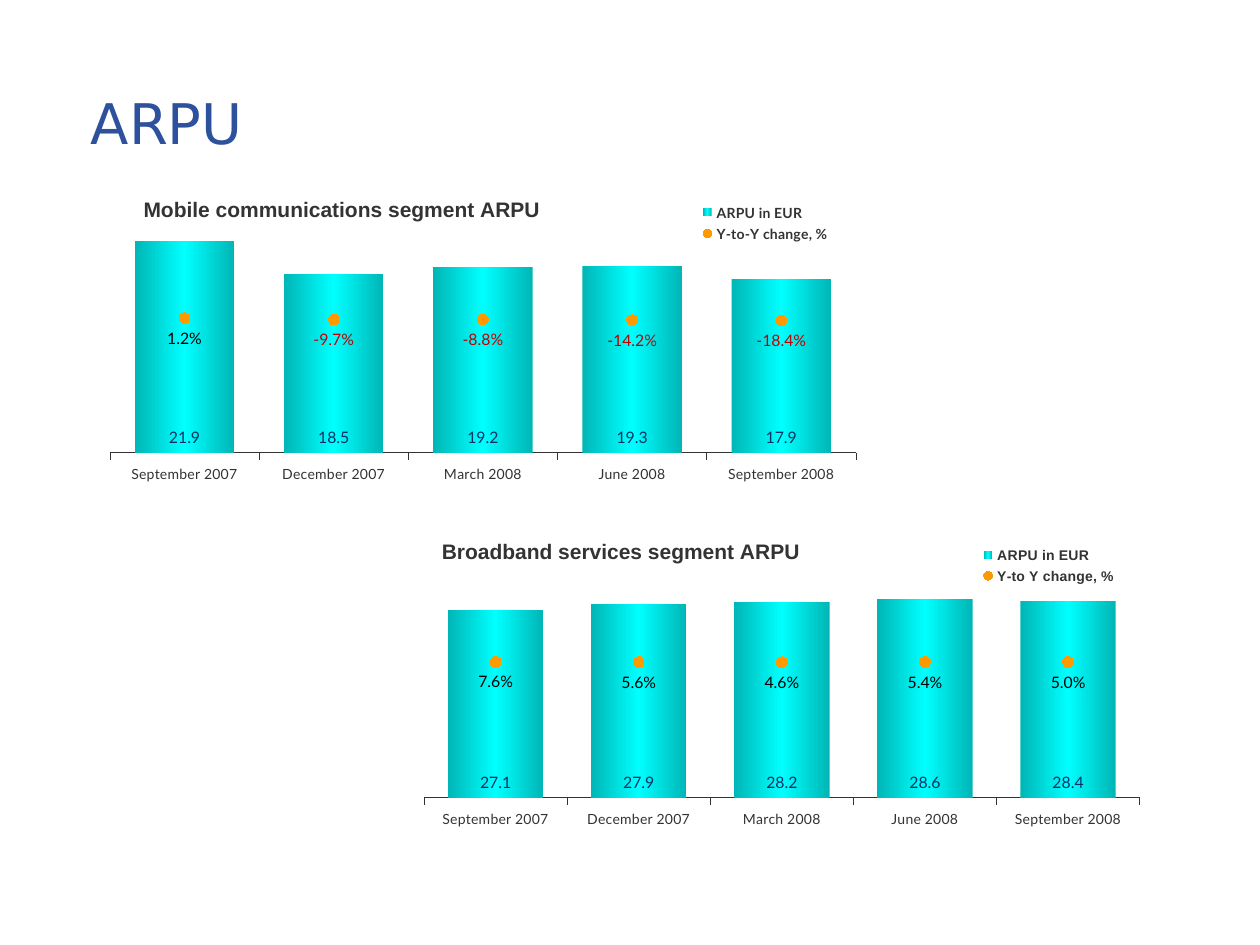
from copy import deepcopy
from dataclasses import dataclass

from pptx import Presentation
from pptx.chart.axis import ValueAxis
from pptx.chart.data import CategoryChartData
from pptx.dml.color import RGBColor
from pptx.enum.chart import XL_CHART_TYPE as ChartType
from pptx.enum.chart import XL_LABEL_POSITION as LabelPosition
from pptx.enum.chart import XL_LEGEND_POSITION as LegendPosition
from pptx.enum.chart import XL_MARKER_STYLE as MarkerStyle
from pptx.enum.chart import XL_TICK_LABEL_POSITION as TickLabels
from pptx.enum.chart import XL_TICK_MARK as TickMark
from pptx.enum.text import MSO_ANCHOR as Anchor
from pptx.enum.text import PP_ALIGN as Align
from pptx.oxml import parse_xml
from pptx.oxml.ns import nsdecls, qn
from pptx.util import Inches, Pt


@dataclass(frozen=True)
class Theme:
    heading: str = "2E519E"
    text: str = "333333"
    black: str = "000000"
    bar: str = "00FFFF"
    bar_label: str = "003366"
    marker: str = "FF9900"
    negative: str = "C00000"
    heading_font: str = "DejaVu Sans"
    title_font: str = "Arial"
    body_font: str = "Lato"
    heading_size: float = 32
    title_size: float = 12
    label_size: float = 9
    chart_size: float = 8.5
    small_size: float = 8


@dataclass(frozen=True)
class ArpuChart:
    title: str
    box: tuple[float, float, float, float]
    arpu: tuple[float, ...]
    change_name: str
    changes: tuple[float, ...]
    arpu_max: float
    title_place: tuple[float, float]
    legend_place: tuple[float, float, float, float]
    legend_font: str


THEME = Theme()
QUARTERS = ("September 2007", "December 2007", "March 2008", "June 2008", "September 2008")
PLOT_PLACE = (0.027, 0.129, 0.925, 0.722)
CHARTS = (
    ArpuChart("Broadband services segment ARPU", (3.2, 4.06, 6.14, 2.67),
              (27.1, 27.9, 28.2, 28.6, 28.4), "Y-to Y change, %",
              (0.076, 0.056, 0.046, 0.054, 0.05), 35,
              (0.045, 0.07), (0.735, 0.09, 0.2, 0.14), "Arial"),
    ArpuChart("Mobile communications segment ARPU", (0.7, 1.33, 6.4, 2.66),
              (21.9, 18.5, 19.2, 19.3, 17.9), "Y-to-Y change, %",
              (0.012, -0.097, -0.088, -0.142, -0.184), 25,
              (0.064, 0.075), (0.75, 0.095, 0.18, 0.14), "Lato"),
)


def style_font(font, size: float, color: str, name: str, bold: bool = False) -> None:
    font.size, font.name, font.bold = Pt(size), name, bold
    font.color.rgb = RGBColor.from_string(color)


def place_part(part, index: int, place: tuple[float, ...], inner: bool = False) -> None:
    """Give a chart part a manual layout in fractions of the chart, as child number index."""
    for old in part.findall(qn("c:layout")):
        part.remove(old)
    target = '<c:layoutTarget val="inner"/>' if inner else ""
    modes = '<c:xMode val="edge"/><c:yMode val="edge"/>'
    sizes = "".join(f'<c:{key} val="{value}"/>' for key, value in zip("xywh", place))
    part.insert(index, parse_xml(
        f'<c:layout {nsdecls("c")}><c:manualLayout>{target}{modes}{sizes}'
        "</c:manualLayout></c:layout>"))


def fill_cylinder(series) -> None:
    """Fill the bars from dark edges to a bright middle."""
    edge = f'<a:srgbClr val="{THEME.bar}"><a:shade val="46275"/></a:srgbClr>'
    series.format.line.fill.background()
    series._element.get_or_add_spPr().insert(0, parse_xml(
        f'<a:gradFill {nsdecls("a")}><a:gsLst><a:gs pos="0">{edge}</a:gs>'
        f'<a:gs pos="50000"><a:srgbClr val="{THEME.bar}"/></a:gs>'
        f'<a:gs pos="100000">{edge}</a:gs></a:gsLst><a:lin ang="0" scaled="1"/></a:gradFill>'))


def style_axes(chart, maximum: float) -> None:
    months = chart.category_axis
    months.major_tick_mark = TickMark.OUTSIDE
    months.minor_tick_mark = TickMark.NONE
    months.tick_label_position = TickLabels.LOW
    months.format.line.color.rgb = RGBColor.from_string(THEME.text)
    months.format.line.width = Pt(0.25)
    style_font(months.tick_labels.font, THEME.small_size, THEME.text, THEME.body_font)
    values = chart.value_axis
    values.has_major_gridlines = False
    values.major_tick_mark = values.minor_tick_mark = TickMark.NONE
    values.tick_label_position = TickLabels.NONE
    values.format.line.fill.background()
    values.minimum_scale, values.maximum_scale = 0, maximum


def move_change_to_second_axis(chart) -> None:
    """Turn the second bar series into a line on its own hidden axes."""
    bars = chart.plots[0]._element
    change = bars.findall(qn("c:ser"))[1]
    for flag in change.findall(qn("c:invertIfNegative")):
        change.remove(flag)
    line = parse_xml(
        f'<c:lineChart {nsdecls("c")}><c:grouping val="standard"/><c:varyColors val="0"/>'
        '<c:marker val="1"/><c:axId val="501"/><c:axId val="502"/></c:lineChart>')
    line.insert(2, change)
    bars.addnext(line)

    months, values = (deepcopy(axis._element) for axis in (chart.category_axis, chart.value_axis))
    for axis, own, other in ((months, "501", "502"), (values, "502", "501")):
        axis.find(qn("c:axId")).set("val", own)
        axis.find(qn("c:crossAx")).set("val", other)
    chart.value_axis._element.addnext(values)
    values.addnext(months)
    months.find(qn("c:delete")).set("val", "1")
    values.find(qn("c:axPos")).set("val", "r")
    values.find(qn("c:crosses")).set("val", "max")
    scale = ValueAxis(values)
    scale.minimum_scale, scale.maximum_scale = -10, 8


def label_series(series, position, number_format: str, color: str) -> None:
    labels = series.data_labels
    labels.show_value = True
    labels.number_format, labels.number_format_is_linked = number_format, False
    labels.position = position
    style_font(labels.font, THEME.label_size, color, THEME.body_font)


def style_change(series, changes: tuple[float, ...]) -> None:
    series.smooth = False
    series.format.line.fill.background()
    series.marker.style, series.marker.size = MarkerStyle.CIRCLE, 6
    series.marker.format.fill.solid()
    series.marker.format.fill.fore_color.rgb = RGBColor.from_string(THEME.marker)
    series.marker.format.line.fill.background()
    label_series(series, LabelPosition.BELOW, "0.0%", THEME.black)
    for index, change in enumerate(changes):
        if change < 0:
            label = series.points[index].data_label
            style_font(label.font, THEME.label_size, THEME.negative, THEME.body_font)
            label.position = LabelPosition.BELOW


def draw_chart(page, item: ArpuChart) -> None:
    data = CategoryChartData()
    data.categories = QUARTERS
    data.add_series("ARPU in EUR", item.arpu, "0.0")
    data.add_series(item.change_name, item.changes, "0.0%")
    chart = page.shapes.add_chart(
        ChartType.COLUMN_CLUSTERED, *map(Inches, item.box), data).chart
    style_font(chart.font, THEME.chart_size, THEME.black, THEME.body_font)

    chart.has_title = True
    chart.chart_title.text_frame.text = item.title
    heading = chart.chart_title.text_frame.paragraphs[0].runs[0]
    style_font(heading.font, THEME.title_size, THEME.text, THEME.title_font, True)
    chart.chart_title.include_in_layout = False
    place_part(chart.chart_title._element, 1, item.title_place)

    chart.has_legend = True
    chart.legend.position = LegendPosition.CORNER
    chart.legend.include_in_layout = False
    style_font(chart.legend.font, THEME.small_size, THEME.text, item.legend_font, True)
    place_part(chart.legend._element, 1, item.legend_place)

    style_axes(chart, item.arpu_max)
    move_change_to_second_axis(chart)
    place_part(chart._chartSpace.chart.plotArea, 0, PLOT_PLACE, inner=True)
    bars, line = chart.plots
    bars.gap_width, bars.vary_by_categories = 50, False
    fill_cylinder(bars.series[0])
    label_series(bars.series[0], LabelPosition.INSIDE_BASE, "0.0", THEME.bar_label)
    style_change(line.series[0], item.changes)


def main() -> None:
    deck = Presentation()
    deck.slide_width, deck.slide_height = Inches(10), Inches(7.5)
    page = deck.slides.add_slide(deck.slide_layouts[5])
    title = page.shapes.title
    title.left, title.top, title.width, title.height = map(Inches, (0.62, 0.52, 6.67, 0.89))
    title.text_frame.text = "ARPU"
    title.text_frame.vertical_anchor = Anchor.MIDDLE
    para = title.text_frame.paragraphs[0]
    para.alignment = Align.LEFT
    style_font(para.runs[0].font, THEME.heading_size, THEME.heading, THEME.heading_font)
    for item in CHARTS:
        draw_chart(page, item)
    deck.save("out.pptx")


if __name__ == "__main__":
    main()
